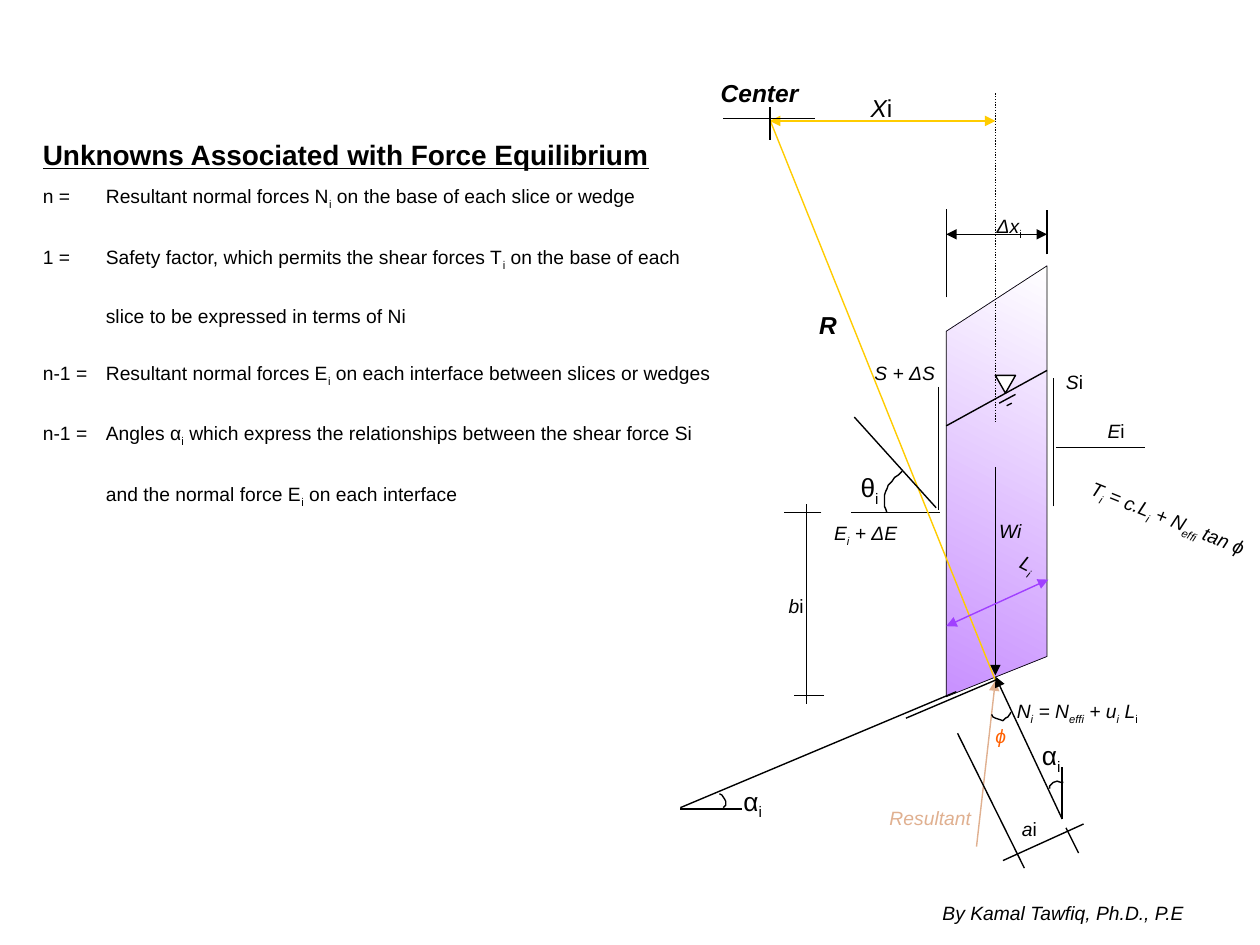
from dataclasses import dataclass

from lxml import etree
from pptx import Presentation, util as u
from pptx.dml.color import RGBColor
from pptx.enum import dml, text
from pptx.oxml.ns import qn

BLACK = RGBColor(0x00, 0x00, 0x00)
WHITE = RGBColor(0xFF, 0xFF, 0xFF)
GOLD = RGBColor(0xFF, 0xCC, 0x00)
SAND = RGBColor(0xE0, 0xB0, 0x90)
ORANGE = RGBColor(0xFF, 0x60, 0x00)
VIOLET = RGBColor(0xA0, 0x40, 0xFF)
LILAC = RGBColor(0xC8, 0x90, 0xFF)

FONT = "Arial"
CM_PER_INCH = 2.54
LINE_WIDTH = 0.79
LEFT, AXIS, RIGHT = 7.51, 7.9, 8.31  # slice sides and centre line
BASE = 5.4  # where the forces meet
CENTER_X = 6.11  # centre of the slip circle


@dataclass
class Line:
    x1: float
    y1: float
    x2: float
    y2: float
    color: RGBColor = BLACK
    head: bool = False
    tail: bool = False
    dotted: bool = False


@dataclass
class Label:
    """In content, _..._ marks a subscript and | ends the italics."""
    content: str
    x: float
    y: float
    width: float
    size: int = 11
    color: RGBColor = BLACK
    bold: bool = False
    italic: bool = True
    height: float = 0
    rotation: float = 0


LINES = [
    Line(AXIS, 3.71, AXIS, 5.36, tail=True),
    Line(8.36, 4.02, 8.36, 3),
    Line(7.45, 3.07, 7.45, 4.05),
    Line(7.46, 4.07, 6.75, 4.07),
    Line(8.38, 3.55, 9.09, 3.55),
    # water table
    Line(RIGHT, 2.94, LEFT, 3.38),
    Line(8.06, 3.13, 7.93, 3.2),
    Line(8.03, 3.2, 7.99, 3.22),
    # resultant and slice width
    Line(AXIS, BASE, 7.75, 6.72, SAND, head=True),
    Line(8.43, 6.5, 8.43, 6.09),
    Line(LEFT, 2.36, LEFT, 1.66),
    Line(RIGHT, 2.02, RIGHT, 1.67),
    Line(LEFT, 1.86, RIGHT, 1.86, head=True, tail=True),
    # slip circle centre and radius
    Line(CENTER_X, 0.96, AXIS, 0.96, GOLD, head=True, tail=True),
    Line(CENTER_X, 0.95, AXIS, BASE, GOLD),
    Line(AXIS, 0.74, AXIS, 3.36, dotted=True),
    Line(CENTER_X, 0.85, CENTER_X, 1.11),
    Line(5.74, 0.94, 6.47, 0.94),
    # base of the slice
    Line(7.59, 5.49, 5.4, 6.41),
    Line(5.4, 6.42, 5.89, 6.42),
    Line(LEFT, 4.97, 8.32, 4.6, VIOLET, head=True, tail=True),
    Line(7.19, 5.7, 7.92, 5.39),
    Line(AXIS, 5.37, 8.43, 6.5, head=True),
    # dimension b
    Line(6.4, 4, 6.4, 5.59),
    Line(6.52, 4.07, 6.22, 4.07),
    Line(6.54, 5.52, 6.3, 5.52),
    # dimension a
    Line(8.6, 6.54, 7.96, 6.83),
    Line(7.6, 5.82, 8.13, 6.89),
    Line(8.46, 6.57, 8.56, 6.77),
    Line(7.43, 4.03, 6.78, 3.31),
]

SLICE = [(RIGHT, 2.11), (RIGHT, 5.21), (LEFT, 5.53), (LEFT, 2.63)]
WATER_MARK = [(7.9, 2.98), (8.06, 2.98), (7.98, 3.12)]
ANGLE_ARCS = [
    [(7.87, 5.67), (7.88, 5.69), (7.9, 5.7), (7.93, 5.71), (7.96, 5.72),
     (7.98, 5.7), (8, 5.69), (8.02, 5.66), (8.02, 5.65)],
    [(8.33, 6.26), (8.33, 6.24), (8.34, 6.23), (8.36, 6.21), (8.39, 6.2),
     (8.42, 6.21), (8.44, 6.21)],
    [(5.71, 6.3), (5.73, 6.31), (5.75, 6.34), (5.76, 6.36), (5.76, 6.39), (5.74, 6.41)],
    [(7.16, 3.74), (7.13, 3.77), (7.1, 3.79), (7.08, 3.82), (7.05, 3.85), (7.04, 3.88),
     (7.03, 3.9), (7.02, 3.93), (7.02, 4.02), (7.03, 4.04), (7.04, 4.07)],
]

LABELS = [
    Label("Resultant", 7.06, 6.4, 1.6, color=SAND),
    Label("Δx_|i_", 7.91, 1.7, 0.32),
    Label("S|i", 8.46, 2.94, 0.35),
    Label("L_i_", 8.07, 4.38, 0.12, height=0.33, rotation=27),
    Label("Wi", 7.93, 4.12, 0.39),
    Label("S + ΔS", 6.94, 2.87, 0.66),
    Label("X|i", 6.91, 0.74, 0.46, 14),
    Label("R", 6.5, 2.46, 0.28, 14, bold=True),
    Label("Center", 5.72, 0.62, 1.46, 14, bold=True),
    Label("E|i", 8.79, 3.33, 0.35),
    Label("E_i_ + ΔE", 6.62, 4.14, 0.87),
    Label("T_i_ = c.L_i_ + N_effi_ tan ϕ", 8.62, 4.03, 1.35, height=0.18, rotation=22),
    Label("ϕ", 7.9, 5.75, 0.15, color=ORANGE),
    Label("N_i_ = N_effi_ + u_i_ L_|i_", 8.07, 5.55, 0.97, height=0.18),
    Label("b|i", 6.26, 4.72, 0.33),
    Label("α_i_", 5.9, 6.23, 0.36, 15, italic=False),
    Label("θ_i_", 6.83, 3.74, 0.31, 15, italic=False),
    Label("a|i", 8.11, 6.49, 0.33),
    Label("α_i_", 8.27, 5.87, 0.36, 15, italic=False),
    Label("By Kamal Tawfiq, Ph.D., P.E", 7.48, 7.15, 4.89),
]

UNKNOWNS = [
    "n =\tResultant normal forces N_i_ on the base of each slice or wedge",
    "1 = \tSafety factor, which permits the shear forces T_i_ on the base of each",
    "\tslice to be expressed in terms of Ni",
    "n-1 = \tResultant normal forces E_i_ on each interface between slices or wedges",
    "n-1 = \tAngles α_i_ which express the relationships between the shear force Si",
    "\tand the normal force E_i_ on each interface",
]


def cm(inches: float) -> int:
    return u.Cm(inches * CM_PER_INCH)


def write(para, content: str, size: int, color=BLACK, bold=False, italic=False) -> None:
    """Fill a paragraph, turning the marks described in Label into runs."""
    for index, piece in enumerate(content.split("_")):
        for order, part in enumerate(piece.split("|")):
            italic = italic and order == 0
            if not part:
                continue
            span = para.add_run()
            span.text = part
            font = span.font
            font.name, font.size, font.bold, font.italic = FONT, u.Pt(size), bold, italic
            font.color.rgb = color
            if index % 2:
                span._r.get_or_add_rPr().set("baseline", "-25000")


def prepare_frame(box, x: float, y: float, width: float, height: float):
    box.left, box.top, box.width, box.height = cm(x), cm(y), cm(width), cm(height)
    frame = box.text_frame
    frame.margin_left = frame.margin_top = frame.margin_right = frame.margin_bottom = 0
    frame.vertical_anchor = text.MSO_ANCHOR.TOP
    frame.auto_size = text.MSO_AUTO_SIZE.NONE
    return frame


def draw_line(page, line: Line) -> None:
    connector = page.shapes.add_connector(1, cm(line.x1), cm(line.y1), cm(line.x2), cm(line.y2))
    connector.line.color.rgb = line.color
    connector.line.width = u.Pt(LINE_WIDTH)
    if line.dotted:
        connector.line.dash_style = dml.MSO_LINE.ROUND_DOT
    outline = connector.line._get_or_add_ln()
    for tag, wanted in (("a:headEnd", line.head), ("a:tailEnd", line.tail)):
        if wanted:
            etree.SubElement(outline, qn(tag)).set("type", "triangle")
    etree.SubElement(connector._element.spPr, qn("a:effectLst"))


def draw_outline(page, points: list, close: bool = False, width: float = LINE_WIDTH):
    corners = [(cm(x), cm(y)) for x, y in points]
    builder = page.shapes.build_freeform(*corners[0])
    builder.add_line_segments(corners[1:], close=close)
    shape = builder.convert_to_shape()
    shape.shadow.inherit = False
    shape.fill.background()
    shape.line.color.rgb = BLACK
    shape.line.width = u.Pt(width)
    return shape


def draw_label(page, label: Label) -> None:
    box = page.shapes.add_textbox(0, 0, 0, 0)
    height = label.height or label.size * 0.85 / 72
    frame = prepare_frame(box, label.x, label.y, label.width, height)
    frame.word_wrap = False
    frame.auto_size = text.MSO_AUTO_SIZE.SHAPE_TO_FIT_TEXT
    box.rotation = label.rotation
    write(frame.paragraphs[0], label.content, label.size, label.color, label.bold, label.italic)


def fill_placeholders(page) -> None:
    title = prepare_frame(page.shapes.title, 0.34, 1.09, 6.53, 0.26).paragraphs[0]
    title.alignment = text.PP_ALIGN.LEFT
    write(title, "Unknowns Associated with Force Equilibrium", 16, bold=True)
    title.runs[0].font.underline = True

    frame = prepare_frame(page.placeholders[1], 0.34, 1.36, 6.53, 3.05)
    for index, unknown in enumerate(UNKNOWNS):
        para = frame.add_paragraph() if index else frame.paragraphs[0]
        para.line_spacing = 1.5
        para.space_before = para.space_after = u.Pt(6)
        settings = para._p.get_or_add_pPr()
        settings.set("marL", "0")
        settings.set("indent", "0")
        etree.SubElement(settings, qn("a:buNone"))
        tabs = etree.SubElement(settings, qn("a:tabLst"))
        etree.SubElement(tabs, qn("a:tab"), pos=str(cm(0.44)), algn="l")
        write(para, unknown, 11)


def main() -> None:
    deck = Presentation()
    deck.slide_width, deck.slide_height = cm(10), cm(7.5)
    page = deck.slides.add_slide(deck.slide_layouts[1])
    fill_placeholders(page)

    soil_slice = draw_outline(page, SLICE, close=True, width=0.39)
    soil_slice.fill.gradient()
    soil_slice.fill.gradient_angle = 63
    for stop, color in zip(soil_slice.fill.gradient_stops, (LILAC, WHITE)):
        stop.color.rgb = color
    water_mark = draw_outline(page, WATER_MARK, close=True)
    water_mark.fill.solid()
    water_mark.fill.fore_color.rgb = WHITE

    for line in LINES:
        draw_line(page, line)
    for arc in ANGLE_ARCS:
        draw_outline(page, arc)
    for label in LABELS:
        draw_label(page, label)
    deck.save("out.pptx")


if __name__ == "__main__":
    main()
